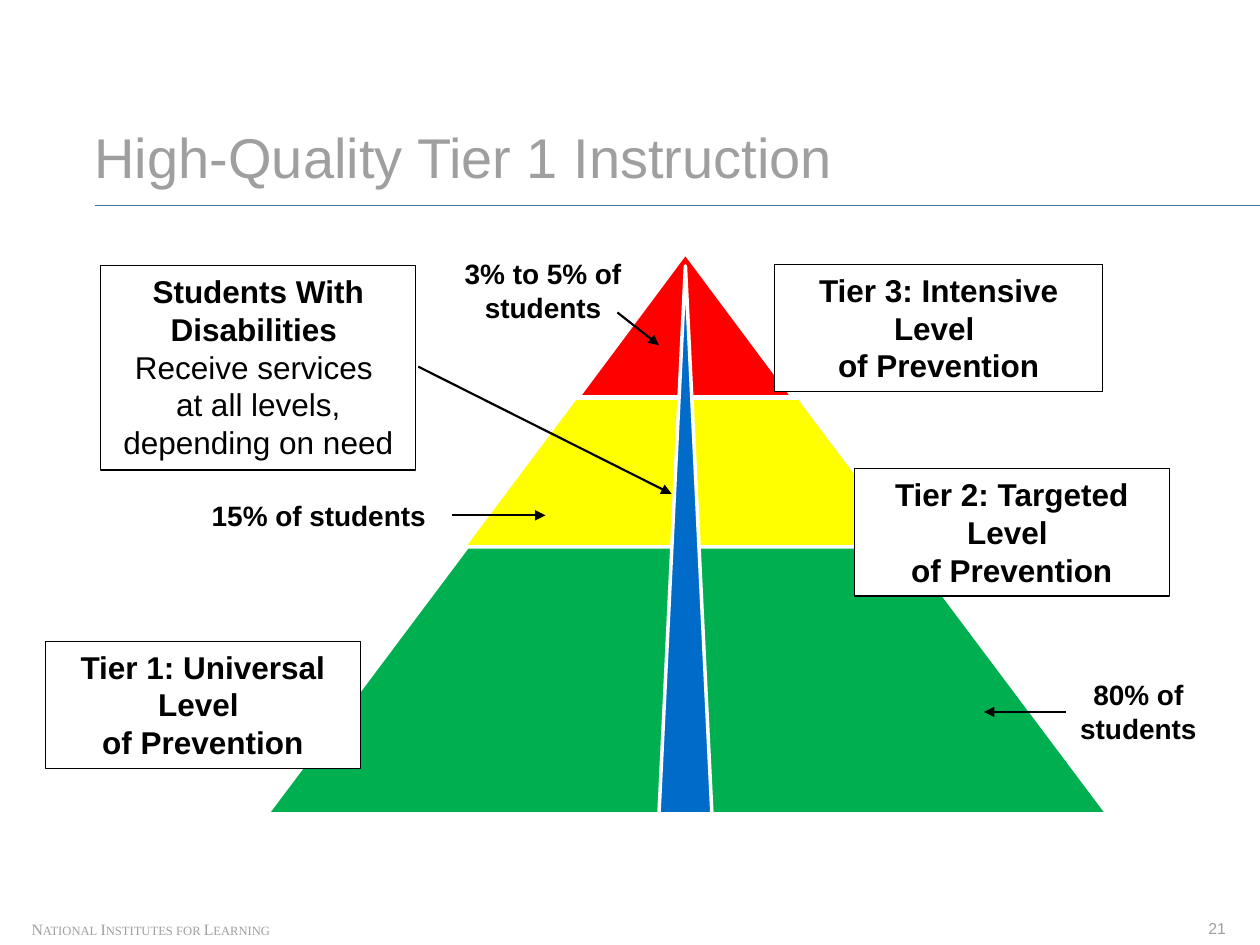
from dataclasses import dataclass
from lxml.etree import SubElement
from pptx import Presentation
from pptx.dml.color import RGBColor
from pptx.enum.shapes import MSO_CONNECTOR, MSO_SHAPE
from pptx.enum.text import MSO_ANCHOR, MSO_AUTO_SIZE, PP_ALIGN
from pptx.oxml.ns import qn
from pptx.util import Inches, Pt

HUES = {
    "white": "FFFFFF", "black": "000000", "gray": "9F9F9F", "rule": "47739F",
    "red": "FF0000", "yellow": "FFFF00", "green": "00B050", "blue": "006BC9",
}


@dataclass
class Tier:
    left: float
    top: float
    width: float
    height: float
    hue: str
    kind: MSO_SHAPE = MSO_SHAPE.TRAPEZOID


@dataclass
class Label:
    left: float
    top: float
    width: float
    height: float
    text: str
    size: int = 16
    bold: bool = True
    hue: str = "black"
    font: str = "Arial"
    align: PP_ALIGN = PP_ALIGN.CENTER
    side: float = 0.1
    edge: float = 0.05
    wrap: bool = True
    framed: bool = False
    fill: str = ""


@dataclass
class Line:
    left: float
    top: float
    right: float
    base: float
    hue: str = "black"
    width: float = 1.25
    arrow: bool = True


def color(name: str) -> RGBColor:
    return RGBColor.from_string(HUES[name])


def draw_tier(slide, tier: Tier) -> None:
    shape = slide.shapes.add_shape(
        tier.kind, Inches(tier.left), Inches(tier.top),
        Inches(tier.width), Inches(tier.height))
    if tier.kind == MSO_SHAPE.TRAPEZOID:
        shape.adjustments[0] = 0.75
    shape.shadow.inherit = False
    shape.fill.solid()
    shape.fill.fore_color.rgb = color(tier.hue)
    shape.line.color.rgb = color("white")
    shape.line.width = Pt(2)


def draw_label(slide, label: Label):
    place = [Inches(n) for n in (label.left, label.top, label.width, label.height)]
    if label.framed:
        shape = slide.shapes.add_shape(MSO_SHAPE.RECTANGLE, *place)
        shape.shadow.inherit = False
        shape.line.color.rgb = color("black")
        shape.line.width = Pt(0.75)
        if label.fill:
            shape.fill.solid()
            shape.fill.fore_color.rgb = color(label.fill)
        else:
            shape.fill.background()
    else:
        shape = slide.shapes.add_textbox(*place)
    frame = shape.text_frame
    frame.word_wrap = label.wrap
    frame.auto_size = MSO_AUTO_SIZE.SHAPE_TO_FIT_TEXT
    frame.vertical_anchor = MSO_ANCHOR.TOP
    frame.margin_left = frame.margin_right = Inches(label.side)
    frame.margin_top = frame.margin_bottom = Inches(label.edge)
    frame.paragraphs[0].text = label.text
    style(frame.paragraphs[0], label, label.bold)
    return shape


def style(para, label: Label, bold: bool) -> None:
    para.alignment = label.align
    for run in para.runs:
        run.font.name = label.font
        run.font.size = Pt(label.size)
        run.font.bold = bold
        run.font.color.rgb = color(label.hue)


def draw_line(slide, line: Line) -> None:
    shape = slide.shapes.add_connector(
        MSO_CONNECTOR.STRAIGHT, Inches(line.left), Inches(line.top),
        Inches(line.right), Inches(line.base))
    shape.line.color.rgb = color(line.hue)
    shape.line.width = Pt(line.width)
    if line.arrow:
        SubElement(shape.line._get_or_add_ln(), qn("a:tailEnd"), type="triangle")
    SubElement(shape._element.spPr, qn("a:effectLst"))


def tier_box(left: float, top: float, name: str, width=2.5, side=0.1) -> Label:
    return Label(left, top, width, 1.01, f"{name} Level \nof Prevention",
                 size=18, side=side, framed=True, fill="white")


def plain(left: float, top: float, width: float, height: float, text: str,
          size=9, font="Arial", wrap=False) -> Label:
    return Label(left, top, width, height, text, size, False, "gray", font,
                 PP_ALIGN.LEFT, 0, 0, wrap)


TIERS = [
    Tier(4.59, 2.01, 1.7, 1.14, "red"),
    Tier(3.68, 3.16, 3.55, 1.18, "yellow"),
    Tier(2.12, 4.34, 6.67, 2.12, "green"),
    Tier(5.23, 2.11, 0.42, 4.35, "blue", MSO_SHAPE.ISOSCELES_TRIANGLE),
]
FOOTER = plain(0.25, 7.3, 1.95, 0.15, "National Institutes for Learning",
               font="Times New Roman")
NEEDS = Label(0.8, 2.11, 2.5, 1.62, "Students With Disabilities ",
              size=18, framed=True)
LABELS = [
    plain(0.75, 0.97, 8.99, 0.54, "High-Quality Tier 1 Instruction", 32, wrap=True),
    plain(9.59, 7.29, 0.15, 0.15, "21"),
    tier_box(0.36, 5.09, "Tier 1: Universal"),
    tier_box(6.15, 2.1, "Tier 3: Intensive", 2.6, 0.05),
    tier_box(6.78, 3.72, "Tier 2: Targeted"),
    Label(3.4, 1.99, 1.82, 0.64, "3% to 5% of students"),
    Label(8.12, 5.33, 1.83, 0.64, "80% of students"),
    Label(1.57, 3.91, 1.92, 0.37, "15% of students", wrap=False),
]
LINES = [
    Line(0.75, 1.63, 10, 1.63, "rule", 0.5, False),
    Line(3.32, 2.91, 5.33, 3.92),
    Line(4.9, 2.48, 5.23, 2.74),
    Line(8.46, 5.65, 7.81, 5.65),
    Line(3.59, 4.09, 4.33, 4.09),
]


def main() -> None:
    deck = Presentation()
    deck.slide_width, deck.slide_height = Inches(10), Inches(7.5)
    slide = deck.slides.add_slide(deck.slide_layouts[6])
    footer = draw_label(slide, FOOTER)
    footer.text_frame.paragraphs[0].runs[0].font._element.set("cap", "small")
    for tier in TIERS:
        draw_tier(slide, tier)
    needs = draw_label(slide, NEEDS)
    para = needs.text_frame.add_paragraph()
    para.text = "Receive services \nat all levels, depending on need"
    style(para, NEEDS, False)
    for label in LABELS:
        draw_label(slide, label)
    for line in LINES:
        draw_line(slide, line)
    deck.save("out.pptx")


if __name__ == "__main__":
    main()
